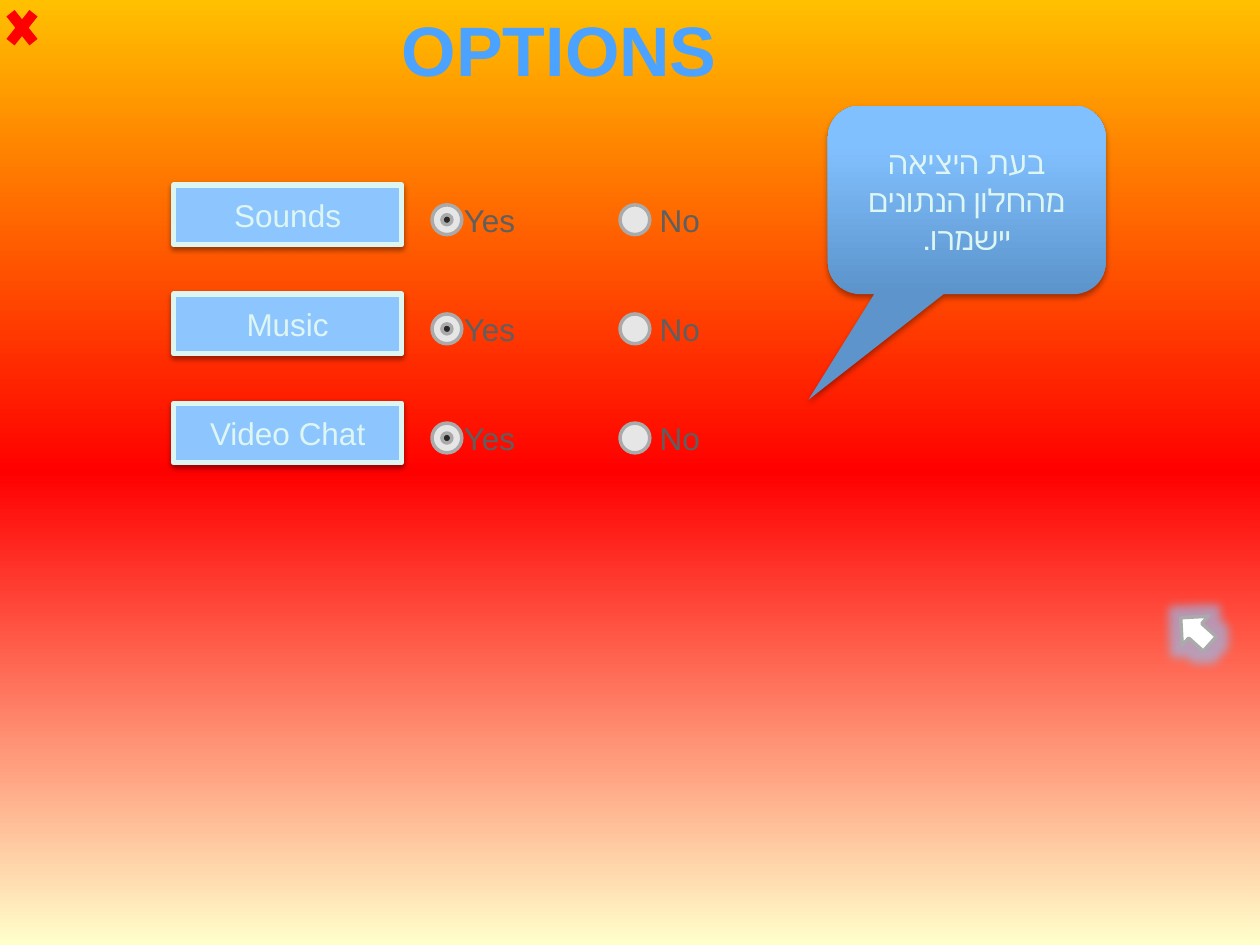
from lxml import etree
from pptx import Presentation
from pptx.dml.color import RGBColor
from pptx.enum import shapes, text
from pptx.oxml.ns import qn
from pptx.util import Cm, Pt

KIND = shapes.MSO_SHAPE
ALIGN = text.PP_ALIGN


def paint(fill, colour):
    fill.solid()
    fill.fore_color.rgb = RGBColor.from_string(colour)


def add_part(kind, box, colour, line=None, line_width=2, effect=None):
    """Add a preset shape; effect is (tag, attributes, colour, alpha)."""
    part = slide.shapes.add_shape(kind, *map(Cm, box))
    part.shadow.inherit = False
    paint(part.fill, colour)
    if line:
        paint(part.line.fill, line)
        part.line.width = Pt(line_width)
    else:
        part.line.fill.background()
    if effect:
        tag, attributes, tint, alpha = effect
        effects = part._element.spPr.find(qn("a:effectLst"))
        node = etree.SubElement(effects, qn(tag), attributes)
        tone = etree.SubElement(node, qn("a:srgbClr"), val=tint)
        etree.SubElement(tone, qn("a:alpha"), val=str(alpha * 1000))
    return part


prs = Presentation()
prs.slide_width, prs.slide_height = Cm(25.4), Cm(19.05)
slide = prs.slides.add_slide(prs.slide_layouts[5])
labels = []  # (shape, wording, size, colour, alignment, right to left)

# Title
title = slide.shapes.title
title_box = dict(left=7.82, top=0, width=6.91, height=1.96)
for side, length in title_box.items():
    setattr(title, side, Cm(length))
labels.append((title, "OPTIONS", 40, "4BA2FF", ALIGN.CENTER, False))

# Close mark and glowing pointer
add_part(KIND.MATH_MULTIPLY, (0, 0, 0.89, 1.12), "FF0000")
glow = ("a:glow", {"rad": "139700"}, "8DC6FF", 60)
pointer = add_part(KIND.RIGHT_ARROW, (23.7, 12.32, 0.79, 0.79), "FFFFFF", "AAAAAA", effect=glow)
pointer.rotation = 222

# Option rows: a button, then a Yes and a No radio button
button_shadow = ("a:outerShdw", dict(blurRad="40000", dist="20000", dir="5400000", rotWithShape="0"),
                 "000000", 38)
for row, option in enumerate(("Sounds", "Music", "Video Chat")):
    top = 3.73 + 2.2 * row
    button = add_part(KIND.RECTANGLE, (3.5, top, 4.6, 1.2), "8DC6FF", "DEF6F1", 3, button_shadow)
    labels.append((button, option, 18, "DEF6F1", ALIGN.CENTER, False))
    for radio_left in (8.71, 12.5):
        add_part(KIND.OVAL, (radio_left, top + 0.4, 0.6, 0.6), "E6E6E6", "AAAAAA")
    for answer, left, width, inset in (("Yes", 9.1, 2.6, 0.25), ("No", 12.7, 3.4, 0.6)):
        choice = slide.shapes.add_textbox(Cm(left), Cm(top + 0.2), Cm(width), Cm(1.02))
        choice.text_frame.margin_left = Cm(inset)
        labels.append((choice, answer, 18, "5F5F5F", ALIGN.LEFT, False))
    add_part(KIND.OVAL, (8.91, top + 0.6, 0.2, 0.2), "282828", "AAAAAA")

# Callout
callout_shadow = ("a:outerShdw", dict(blurRad="40000", dist="23000", dir="5400000", rotWithShape="0"),
                  "000000", 35)
callout = add_part(KIND.ROUNDED_RECTANGULAR_CALLOUT, (16.69, 2.13, 5.6, 3.8), "81C0FF",
                   effect=callout_shadow)
for index, value in enumerate((-0.57, 1.06, 0.17)):
    callout.adjustments[index] = value
labels.append((callout, "בעת היציאה מהחלון הנתונים יישמרו.", 18, "DEF6F1", ALIGN.CENTER, True))

# Wording
for holder, wording, size, colour, alignment, right_to_left in labels:
    frame = holder.text_frame
    frame.word_wrap = holder is not title
    paragraph = frame.paragraphs[0]
    paragraph.alignment = alignment
    if right_to_left:
        paragraph._p.get_or_add_pPr().set("rtl", "1")
    run = paragraph.add_run()
    run.text = wording
    for name, value in dict(name="Arial", size=Pt(size), bold=holder is title).items():
        setattr(run.font, name, value)
    paint(run.font.fill, colour)

# Gradients: background, title letters and callout
background = slide.background.fill
title_run = title.text_frame.paragraphs[0].runs[0]
for fill, owner, angle, stops in (
    (background, slide._element.cSld.find(qn("p:bg")), 90,
     ((0, "FFC000"), (50, "FF0000"), (100, "FFFFCC"))),
    (title_run.font.fill, title_run._r, 90,
     ((0, "B9D9FF"), (75, "4BA2FF"), (100, "2D92F8"))),
    (callout.fill, callout._element.spPr, 270,
     ((0, "5C94CB"), (80, "81C0FF"), (100, "82C1FF"))),
):
    fill.gradient()
    gradient = next(owner.iter(qn("a:gradFill")))
    gradient.find(qn("a:lin")).set("ang", str(angle * 60000))
    stop_list = gradient.find(qn("a:gsLst"))
    for old_stop in list(stop_list):
        stop_list.remove(old_stop)
    for position, colour in stops:
        stop = etree.SubElement(stop_list, qn("a:gs"), pos=str(position * 1000))
        etree.SubElement(stop, qn("a:srgbClr"), val=colour)

prs.save("out.pptx")
